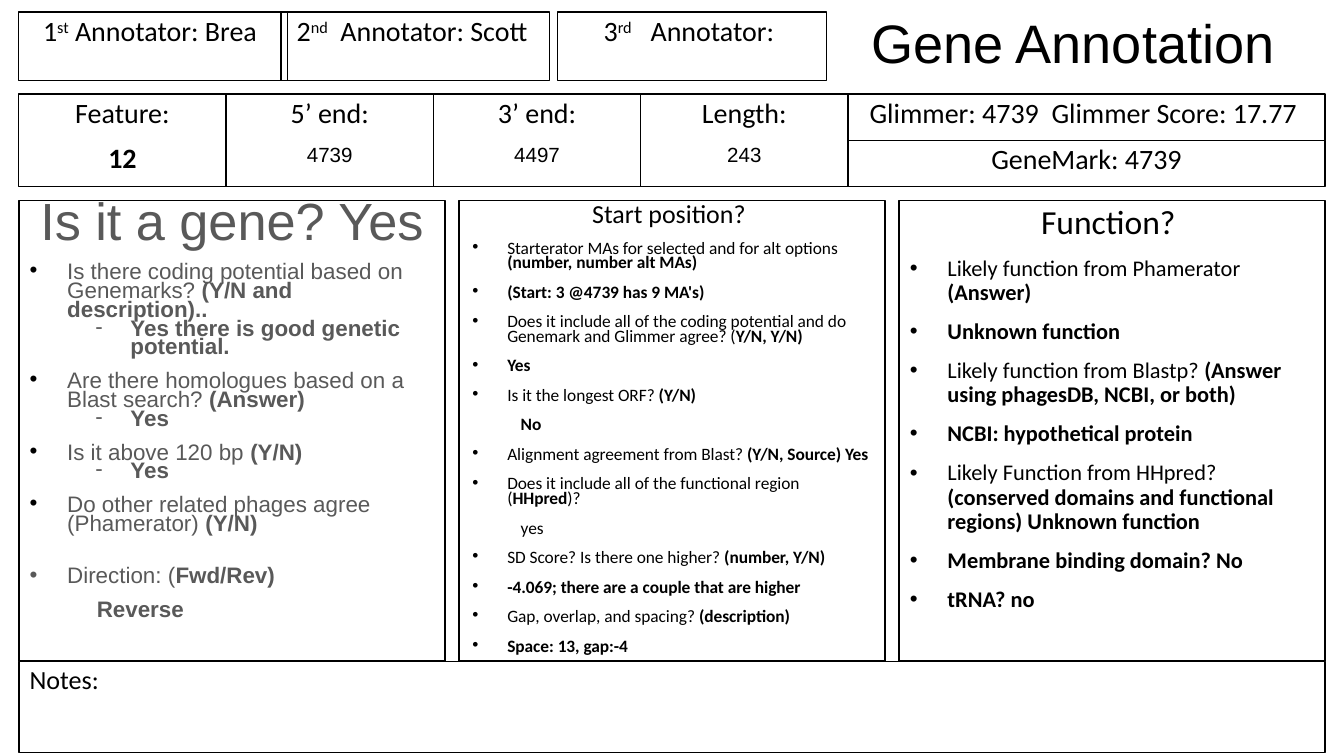
import pptx
import pptx.util
import pptx.dml.color
import pptx.enum.shapes
import pptx.enum.text
import lxml.etree
from pptx.util import Inches, Pt

# Content: *...* is bold, ^...^ is raised
TITLE = "Gene Annotation"
NAMES = [
    (0.14, "1^st^ Annotator: Brea "),
    (2.09, "2^nd^  Annotator: Scott "),
    (4.15, "3^rd^   Annotator: "),
]
FACTS = [("Feature:", "*12*"), ("5’ end:", "4739"), ("3’ end:", "4497"), ("Length:", "243")]
CALLS = ["Glimmer: 4739  Glimmer Score: 17.77 ", "GeneMark: 4739"]
GENE = [
    ("dot", "Is there coding potential based on Genemarks? *(Y/N and description)..*"),
    ("dash", "*Yes there is good genetic potential.*"),
    ("dot", "Are there homologues based on a Blast search? *(Answer)*"),
    ("dash", "*Yes*"),
    ("dot", "Is it above 120 bp *(Y/N)*"),
    ("dash", "*Yes*"),
    ("dot", "Do other related phages agree (Phamerator)* (Y/N)*"),
    ("last", "Direction: (*Fwd/Rev)*"),
    ("deep", "*Reverse*"),
]
START = [
    ("near", "Starterator MAs for selected and for alt options* (number, number alt MAs)*"),
    ("near", "*(Start: 3 @4739 has 9 MA's)*"),
    ("near", "Does it include all of the coding potential and do Genemark and Glimmer agree? (*Y/N, Y/N)*"),
    ("near", "*Yes*"),
    ("near", "Is it the longest ORF? *(Y/N)*"),
    ("note", "*No*"),
    ("near", "Alignment agreement from Blast? *(Y/N, Source) Yes*"),
    ("near", "Does it include all of the functional region (*HHpred*)?"),
    ("note", "yes"),
    ("near", "SD Score? Is there one higher? *(number, Y/N)*"),
    ("near", "*-4.069; there are a couple that are higher*"),
    ("near", "Gap, overlap, and spacing? *(description)*"),
    ("near", "*Space: 13, gap:-4*"),
]
ROLE = [
    ("dot", "Likely function from Phamerator *(Answer)*"),
    ("dot", "*Unknown function*"),
    ("dot", "Likely function from Blastp? *(Answer using phagesDB, NCBI, or both)*"),
    ("dot", "*NCBI: hypothetical protein*"),
    ("dot", "Likely Function from HHpred? *(conserved domains and functional regions) Unknown function*"),
    ("dot", "*Membrane binding domain? No*"),
    ("dot", "*tRNA? no*"),
]

# Theme: text styles are (font, size, colour)
BLACK, GREY = "000000", "595959"
THEME = {
    "title": ("Arial", 29, BLACK),
    "label": ("Calibri", 15, BLACK),
    "value": ("Arial", 11, BLACK),
    "notes": ("Calibri", 14, BLACK),
    "gene head": ("Arial", 28, GREY), "gene": ("Arial", 12, GREY),
    "start head": ("Calibri", 13.9, BLACK), "start": ("Calibri", 9.3, BLACK),
    "role head": ("Calibri", 18, BLACK), "role": ("Calibri", 12, BLACK),
}
# Levels: indent, hang, bullet, bullet colour, space before
LEVELS = {
    "dot": (0.28, 0.28, "•", BLACK, 8),
    "near": (0.28, 0.26, "•", BLACK, 8),
    "last": (0.28, 0.28, "•", GREY, 18),
    "dash": (0.75, 0.26, "-", GREY, 0),
    "deep": (0.5, 0, None, None, 8),
    "note": (0.38, 0, None, None, 8),
    "flat": (0, 0, None, None, 0),
    "next": (0, 0, None, None, 8),
}
PANELS = [("gene", "Is it a gene? Yes", GENE, 0.7),
          ("start", "Start position? ", START, 0.7),
          ("role", "Function? ", ROLE, 0.9)]
LEFT, WIDE, SPLIT = 0.14, 9.72, 6.31
PANEL, ROW = 3.17, 0.69
ALIGN = pptx.enum.text.PP_ALIGN


def color(code):
    return pptx.dml.color.RGBColor.from_string(code)


def mark(para, level):
    """Set the indent and bullet of a paragraph."""
    indent, hang, sign, tint, _ = LEVELS[level]
    props = para._p.get_or_add_pPr()
    props.set("marL", str(Inches(indent)))
    props.set("indent", str(-Inches(hang)))

    def add(node, tag, **attrs):
        return lxml.etree.SubElement(node, pptx.oxml.ns.qn("a:" + tag), **attrs)

    if sign:
        add(add(props, "buClr"), "srgbClr", val=tint)
        add(props, "buFont", typeface="Arial")
        add(props, "buChar", char=sign)
    else:
        add(props, "buNone")


def write(para, text, style, level="flat", align=ALIGN.CENTER, pitch=0.9):
    mark(para, level)
    para.alignment, para.line_spacing = align, pitch
    para.space_before = Pt(LEVELS[level][4])
    face, size, tint = THEME[style]
    para.font.name, para.font.size = face, Pt(size)
    para.font.color.rgb = color(tint)
    for i, part in enumerate(text.split("*")):
        for j, piece in enumerate(part.split("^")):
            if piece:
                run = para.add_run()
                run.text = piece
                run.font.bold = i % 2 == 1
                if j % 2:
                    run._r.get_or_add_rPr().set("baseline", "30000")


def place(shape, x, y, w, h):
    """Position a shape and prepare its text frame."""
    shape.left, shape.top, shape.width, shape.height = map(Inches, (x, y, w, h))
    frame = shape.text_frame
    frame.word_wrap = True
    frame.auto_size = pptx.enum.text.MSO_AUTO_SIZE.NONE
    frame.vertical_anchor = pptx.enum.text.MSO_ANCHOR.TOP
    frame.margin_left = frame.margin_right = Inches(0.08)
    frame.margin_top = frame.margin_bottom = Inches(0.04)
    return frame


def box(slide, x, y, w, h, shape=None):
    """Outline a box, new or from a placeholder, and return its text frame."""
    if shape is None:
        shape = slide.shapes.add_shape(pptx.enum.shapes.MSO_SHAPE.RECTANGLE, 0, 0, 0, 0)
        shape.shadow.inherit = False
    shape.fill.background()
    shape.line.color.rgb = color(BLACK)
    shape.line.width = Pt(0.75)
    return place(shape, x, y, w, h)


def main():
    deck = pptx.Presentation()
    deck.slide_width = Inches(10)
    deck.slide_height = deck.slide_width * 9 // 16
    slide = deck.slides.add_slide(deck.slide_layouts[0])

    # Title
    frame = place(slide.shapes.title, 6.11, 0.06, 3.75, 0.54)
    frame.vertical_anchor = pptx.enum.text.MSO_ANCHOR.BOTTOM
    write(frame.paragraphs[0], TITLE, "title")

    # Three question panels, the first in the body placeholder
    step = (WIDE - PANEL) / 2
    for i, (style, head, items, pitch) in enumerate(PANELS):
        body = slide.placeholders[1] if i == 0 else None
        frame = box(slide, LEFT + i * step, 1.49, PANEL, 3.43, body)
        write(frame.paragraphs[0], head, style + " head", pitch=pitch)
        for level, text in items:
            write(frame.add_paragraph(), text, style, level, ALIGN.LEFT, pitch)

    # Feature cells
    cell = (SPLIT - LEFT) / len(FACTS)
    for i, (label, value) in enumerate(FACTS):
        frame = box(slide, LEFT + i * cell, 0.7, cell, ROW)
        write(frame.paragraphs[0], label, "label")
        write(frame.add_paragraph(), value, "value" if i else "label", "next")

    # Gene callers
    half = ROW / len(CALLS)
    for i, text in enumerate(CALLS):
        frame = box(slide, SPLIT, 0.7 + i * half, LEFT + WIDE - SPLIT, half)
        write(frame.paragraphs[0], text, "label")

    # Annotators
    for x, text in NAMES:
        write(box(slide, x, 0.09, 2, 0.51).paragraphs[0], text, "label")

    # Notes
    frame = box(slide, LEFT, 4.92, WIDE, 0.68)
    write(frame.paragraphs[0], "Notes:", "notes", align=ALIGN.LEFT)

    deck.save("out.pptx")


if __name__ == "__main__":
    main()
